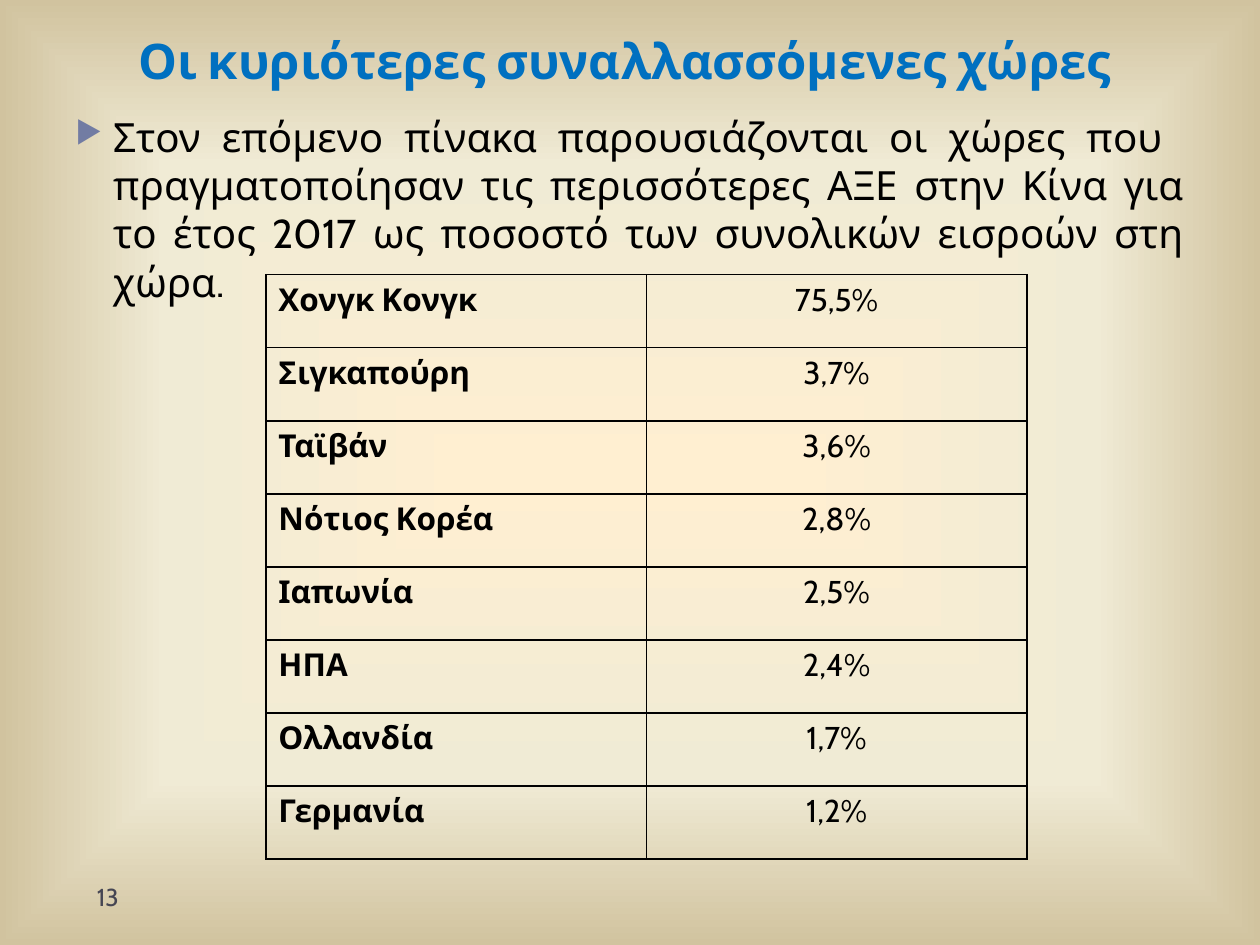
from lxml import etree
from pptx import Presentation
from pptx import util as u
from pptx.dml.color import RGBColor
from pptx.enum import text
from pptx.oxml.ns import qn

FONT = "Cabin"
BLACK = "000000"
BACKDROP = [(0, "FFEFD1"), (65, "F0EBD5"), (100, "D1C39F")]
INVESTORS = [
    ("Χονγκ Κονγκ", "75,5%"),
    ("Σιγκαπούρη", "3,7%"),
    ("Ταϊβάν", "3,6%"),
    ("Νότιος Κορέα", "2,8%"),
    ("Ιαπωνία", "2,5%"),
    ("ΗΠΑ", "2,4%"),
    ("Ολλανδία", "1,7%"),
    ("Γερμανία", "1,2%"),
]
COLUMN_WIDTH, ROW_HEIGHT = 3.02, 0.58


def sub(parent, tag, **attributes):
    return etree.SubElement(parent, qn(tag), attributes)


def add_solid(parent, color):
    sub(sub(parent, "a:solidFill"), "a:srgbClr", val=color)


def style(paragraph, size, color=BLACK, bold=False, align=text.PP_ALIGN.LEFT):
    paragraph.alignment = align
    font = paragraph.font
    font.name, font.size, font.bold = FONT, u.Pt(size), bold
    font.color.rgb = RGBColor.from_string(color)


def paint_backdrop(slide):
    """Fill the background with a gradient that runs from the centre outwards."""
    fill = slide.background.fill
    fill.gradient()
    gradient = slide.background._cSld.find(".//" + qn("a:gradFill"))
    for child in list(gradient):
        gradient.remove(child)
    stops = sub(gradient, "a:gsLst")
    for share, color in BACKDROP:
        stop = sub(stops, "a:gs", pos=str(share * 1000))
        sub(stop, "a:srgbClr", val=color)
    path = sub(gradient, "a:path", path="shape")
    sub(path, "a:fillToRect", l="50000", t="50000", r="50000", b="50000")


def set_title(slide, wording):
    title = slide.shapes.title
    title.left, title.top = u.Inches(0.5), u.Inches(0.17)
    title.width, title.height = u.Inches(9), u.Inches(0.59)
    title.text_frame.text = wording
    title.text_frame.vertical_anchor = text.MSO_ANCHOR.BOTTOM
    style(title.text_frame.paragraphs[0], 28, "0070C0", True, text.PP_ALIGN.CENTER)


def add_text(slide, wording, left, top, width, height):
    box = slide.shapes.add_textbox(*map(u.Inches, (left, top, width, height)))
    box.text_frame.word_wrap = True
    paragraph = box.text_frame.paragraphs[0]
    paragraph.text = wording
    return paragraph


def add_bullet(paragraph):
    properties = paragraph._p.get_or_add_pPr()
    indent = u.Inches(0.3)
    properties.set("marL", str(indent))
    properties.set("indent", str(-indent))
    sub(sub(properties, "a:buClr"), "a:srgbClr", val="727CA3")
    sub(properties, "a:buSzPct", val="76000")
    sub(properties, "a:buChar", char="▶")


def add_borders(cell):
    properties = cell._tc.get_or_add_tcPr()
    for side in ("a:lnL", "a:lnR", "a:lnT", "a:lnB"):
        add_solid(sub(properties, side, w=str(u.Pt(1))), BLACK)


def add_investor_table(slide):
    rows, columns = len(INVESTORS), len(INVESTORS[0])
    frame = slide.shapes.add_table(
        rows, columns, u.Inches(2.11), u.Inches(2.18),
        u.Inches(columns * COLUMN_WIDTH), u.Inches(rows * ROW_HEIGHT))
    table = frame.table
    table.first_row = table.horz_banding = False
    for row, investor in enumerate(INVESTORS):
        for column, wording in enumerate(investor):
            cell = table.cell(row, column)
            cell.text = wording
            is_country = column == 0
            align = text.PP_ALIGN.LEFT if is_country else text.PP_ALIGN.CENTER
            style(cell.text_frame.paragraphs[0], 18, bold=is_country, align=align)
            add_borders(cell)
            cell.fill.background()


def main():
    deck = Presentation()
    deck.slide_width, deck.slide_height = u.Inches(10), u.Inches(7.5)
    slide = deck.slides.add_slide(deck.slide_layouts[5])
    paint_backdrop(slide)
    set_title(slide, "Οι κυριότερες συναλλασσόμενες χώρες ")

    page_number = add_text(slide, "13", 0.67, 6.95, 2.17, 0.4)
    style(page_number, 14, "464653")

    intro = add_text(
        slide,
        "Στον επόμενο πίνακα παρουσιάζονται οι χώρες που  πραγματοποίησαν "
        "τις περισσότερες ΑΞΕ στην Κίνα για το έτος 2017 ως ποσοστό των "
        "συνολικών εισροών στη χώρα.",
        0.5, 0.84, 9, 5.9)
    add_bullet(intro)
    style(intro, 23, align=text.PP_ALIGN.JUSTIFY)

    add_investor_table(slide)
    deck.save("out.pptx")


if __name__ == "__main__":
    main()
